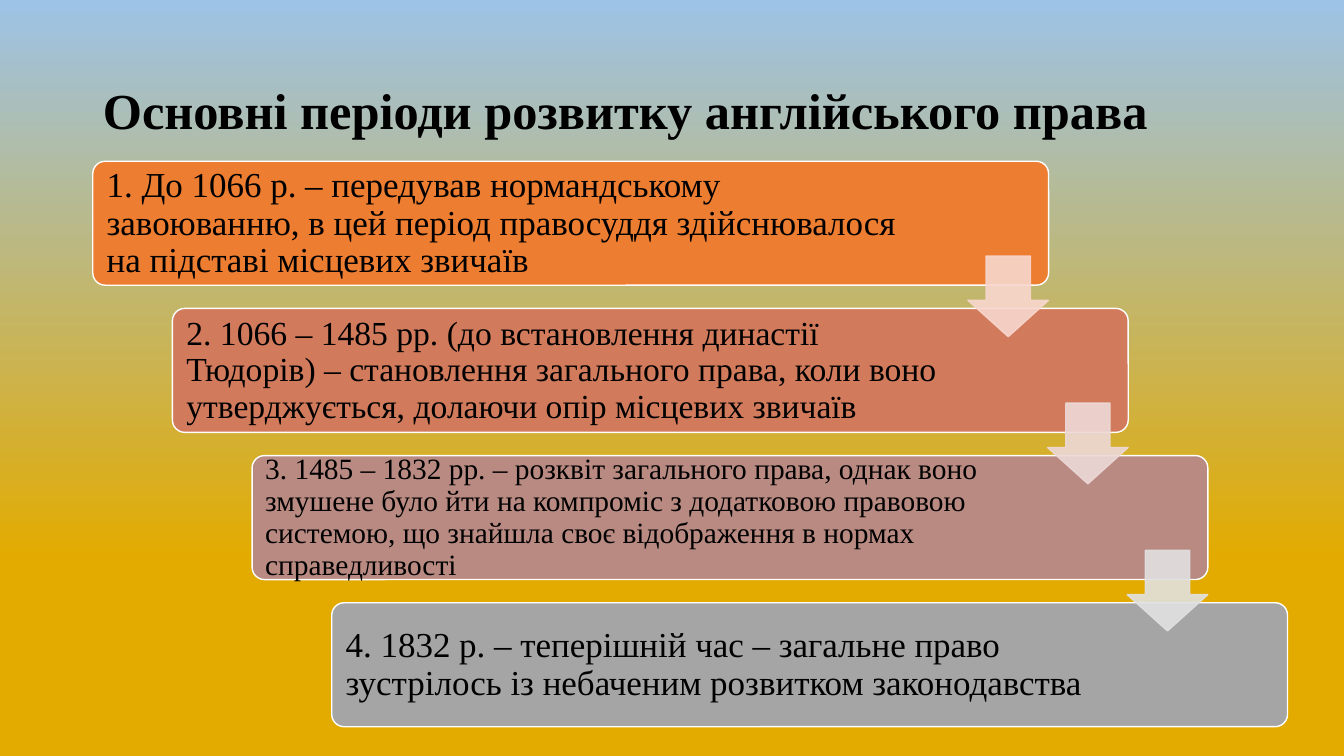
import pptx
import pptx.util
import pptx.dml.color
import pptx.enum.shapes
import pptx.enum.text
import pptx.oxml
import pptx.oxml.ns
from lxml import etree

Inches = pptx.util.Inches
Pt = pptx.util.Pt
RGBColor = pptx.dml.color.RGBColor
SHAPE = pptx.enum.shapes.MSO_SHAPE

BLACK = RGBColor(0x00, 0x00, 0x00)
WHITE = RGBColor(0xFF, 0xFF, 0xFF)
GOLD = RGBColor(0xE3, 0xAB, 0x00)
SKY = RGBColor(0x9D, 0xC3, 0xE6)
ORANGE = RGBColor(0xED, 0x7D, 0x31)
TERRACOTTA = RGBColor(0xD1, 0x7B, 0x5C)
DUSTY_ROSE = RGBColor(0xB9, 0x8A, 0x82)
GREY = RGBColor(0xA5, 0xA5, 0xA5)
PALE_PEACH = RGBColor(0xF8, 0xD7, 0xCE)
PALE_ROSE = RGBColor(0xED, 0xD9, 0xD7)
PALE_GREY = RGBColor(0xE1, 0xE1, 0xE1)

# Staircase geometry in inches
FIRST_LEFT, FIRST_TOP = 0.92, 1.6
STEP_X, STEP_Y = 0.79, 1.46
CARD_WIDTH, CARD_HEIGHT = 9.48, 1.23
TEXT_GAP, TEXT_HEIGHT = 0.04, 1.16
ARROW_SIZE, ARROW_DROP = 0.8, 0.94

# Text, size in points, text width, card colour, colour of the arrow to the next period
PERIODS = [
    ("1. До 1066 р. – передував нормандському завоюванню, в цей період "
     "правосуддя здійснювалося на підставі місцевих звичаїв",
     25, 8.05, ORANGE, PALE_PEACH),
    ("2. 1066 – 1485 рр. (до встановлення династії Тюдорів) – становлення "
     "загального права, коли воно утверджується, долаючи опір місцевих звичаїв",
     24, 7.82, TERRACOTTA, PALE_ROSE),
    ("3. 1485 – 1832 рр. – розквіт загального права, однак воно змушене було "
     "йти на компроміс з додатковою правовою системою, що знайшла своє "
     "відображення в нормах справедливості",
     21, 7.83, DUSTY_ROSE, PALE_GREY),
    ("4. 1832 р. – теперішній час – загальне право зустрілось із небаченим "
     "розвитком законодавства",
     25, 7.82, GREY, None),
]


class PeriodSlide:
    """Holds the text style and the current slide."""

    font_format = {"name": "Times New Roman"}

    def __init__(self, deck):
        self.slide = deck.slides.add_slide(deck.slide_layouts[5])

    def background(self, bottom, top):
        fill = self.slide.background.fill
        fill.gradient()
        fill.gradient_angle = 90
        for stop, (position, colour) in zip(fill.gradient_stops, (bottom, top)):
            stop.position = position
            stop.color.rgb = colour

    def put_text(self, frame, wording, **font_format):
        frame.word_wrap = True
        frame.auto_size = pptx.enum.text.MSO_AUTO_SIZE.NONE
        frame.vertical_anchor = pptx.enum.text.MSO_ANCHOR.MIDDLE
        paragraph = frame.paragraphs[0]
        paragraph.alignment = pptx.enum.text.PP_ALIGN.LEFT
        paragraph.line_spacing = 0.9
        run = paragraph.add_run()
        run.text = wording
        run.font.color.rgb = BLACK
        for key, value in {**self.font_format, **font_format}.items():
            setattr(run.font, key, value)

    def title(self, wording, box):
        heading = self.slide.shapes.title
        for key, value in zip(("left", "top", "width", "height"), box):
            setattr(heading, key, Inches(value))
        self.put_text(heading.text_frame, wording, size=Pt(36), bold=True)

    def shape(self, preset, box, adjustments, colour, outline):
        figure = self.slide.shapes.add_shape(preset, *map(Inches, box))
        figure.shadow.inherit = False
        for index, value in enumerate(adjustments):
            figure.adjustments[index] = value
        figure.fill.solid()
        figure.fill.fore_color.rgb = colour
        figure.line.color.rgb = outline
        figure.line.width = Pt(1)
        return figure

    def card(self, left, top, colour):
        self.shape(SHAPE.ROUNDED_RECTANGLE, (left, top, CARD_WIDTH, CARD_HEIGHT),
                   [0.1], colour, WHITE)

    def caption(self, left, top, width, wording, size):
        box = self.slide.shapes.add_textbox(
            *map(Inches, (left, top, width, TEXT_HEIGHT)))
        inset = Inches(0.1 if size > 21 else 0.09)
        for side in ("left", "top", "right", "bottom"):
            setattr(box.text_frame, f"margin_{side}", inset)
        self.put_text(box.text_frame, wording, size=Pt(size))

    def arrow(self, left, top, colour):
        figure = self.shape(SHAPE.DOWN_ARROW, (left, top, ARROW_SIZE, ARROW_SIZE),
                            [0.55, 0.45], colour, colour)
        # Fill and outline are 90% opaque
        qn = pptx.oxml.ns.qn
        for tone in figure.element.spPr.iter(qn("a:srgbClr")):
            etree.SubElement(tone, qn("a:alpha"), val="90000")


def main():
    deck = pptx.Presentation()
    deck.slide_width, deck.slide_height = Inches(13.33), Inches(7.5)
    page = PeriodSlide(deck)

    # Background and title
    page.background((0.26, GOLD), (1, SKY))
    page.title("Основні періоди розвитку англійського права",
               (0.92, 0.4, 11.5, 1.45))

    # Cards descending to the right
    corners = [(FIRST_LEFT + i * STEP_X, FIRST_TOP + i * STEP_Y)
               for i in range(len(PERIODS))]
    for (left, top), (wording, size, width, colour, _) in zip(corners, PERIODS):
        page.card(left, top, colour)
        page.caption(left + TEXT_GAP, top + TEXT_GAP, width, wording, size)

    # Arrows between neighbouring cards
    for (left, top), (*_, arrow_colour) in zip(corners[:-1], PERIODS):
        page.arrow(left + CARD_WIDTH - ARROW_SIZE, top + ARROW_DROP, arrow_colour)

    deck.save("out.pptx")


if __name__ == "__main__":
    main()
